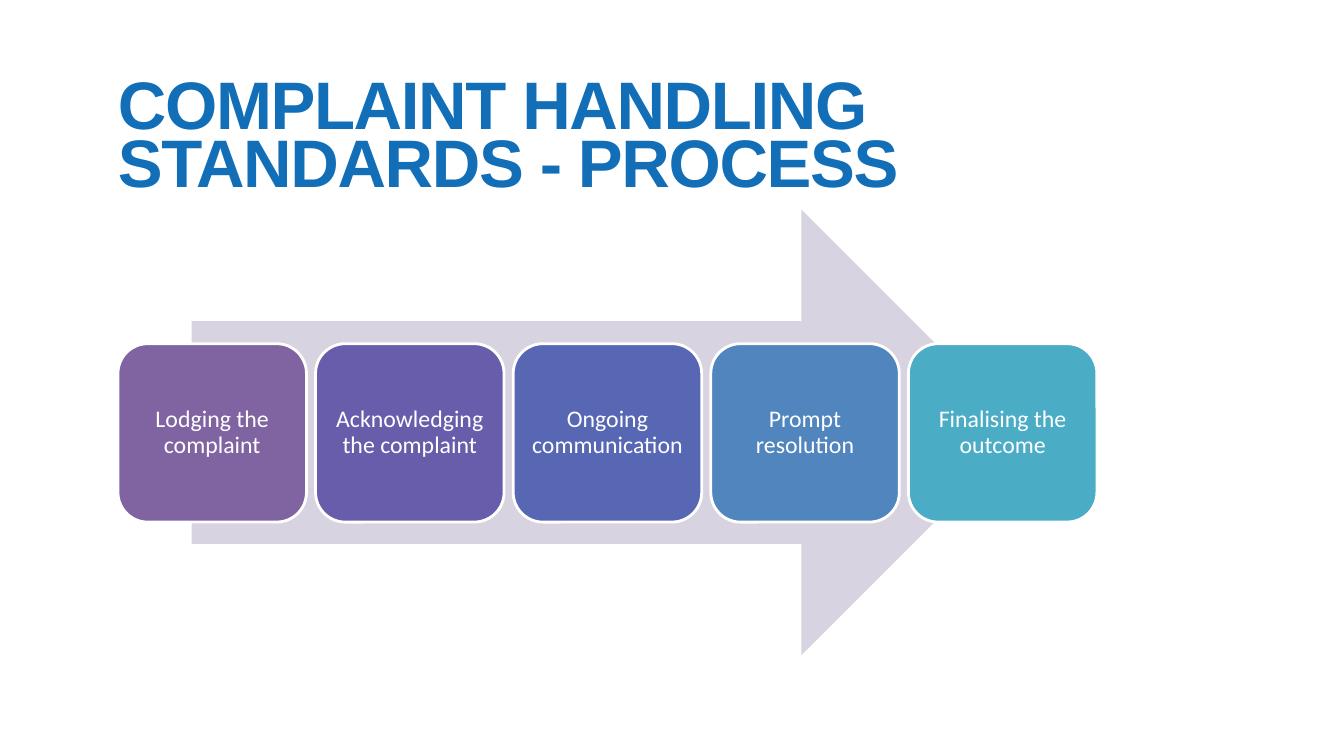
from pptx import Presentation
from pptx import util as u
from pptx.dml.color import RGBColor
from pptx.enum import shapes, text

COLOURS = {
    "title": "116EB7",
    "arrow": "D8D3E0",
    "white": "FFFFFF",
    "lodging": "8064A2",
    "acknowledging": "685DAB",
    "ongoing": "5767B4",
    "prompt": "5185BD",
    "finalising": "4BACC6",
}

STEPS = [
    ("Lodging the complaint", "lodging"),
    ("Acknowledging the complaint", "acknowledging"),
    ("Ongoing communication", "ongoing"),
    ("Prompt resolution", "prompt"),
    ("Finalising the outcome", "finalising"),
]
STEP_LEFT, STEP_TOP, STEP_PITCH = 1.17, 3.41, 1.96
STEP_WIDTH, STEP_HEIGHT = 1.87, 1.77


class ProcessSlide:
    """Holds the slide and its style, and draws each kind of element."""

    def __init__(self, prs):
        self.slide = prs.slides.add_slide(prs.slide_layouts[6])

    def colour(self, name):
        return RGBColor.from_string(COLOURS[name])

    def set_text(self, sp, content, font, size, colour, inset, bold=False):
        """Put one paragraph into a shape and return the paragraph and its run."""
        tf = sp.text_frame
        tf.word_wrap = True
        tf.margin_left = tf.margin_right = u.Inches(inset)
        tf.margin_top = tf.margin_bottom = u.Inches(inset)
        tf.text = content
        p = tf.paragraphs[0]
        r = p.runs[0]
        r.font.name = font
        r.font.size = u.Pt(size)
        r.font.bold = bold
        r.font.color.rgb = self.colour(colour)
        return p, r

    def title(self, content, *box):
        sp = self.slide.shapes.add_textbox(*map(u.Inches, box))
        p, r = self.set_text(sp, content, "Arial", 48, "title", 0, bold=True)
        p.line_spacing = u.Pt(42)
        r._r.get_or_add_rPr().set("spc", "-100")

    def shape(self, kind, fill, *box):
        sp = self.slide.shapes.add_shape(kind, *map(u.Inches, box))
        sp.shadow.inherit = False
        sp.fill.solid()
        sp.fill.fore_color.rgb = self.colour(fill)
        sp.line.fill.background()
        return sp

    def arrow(self, *box):
        self.shape(shapes.MSO_SHAPE.RIGHT_ARROW, "arrow", *box)

    def step(self, content, fill, *box):
        sp = self.shape(shapes.MSO_SHAPE.ROUNDED_RECTANGLE, fill, *box)
        sp.line.color.rgb = self.colour("white")
        sp.line.width = u.Pt(2)
        p, _ = self.set_text(sp, content, "Calibri", 17, "white", 0.07)
        p.alignment = text.PP_ALIGN.CENTER
        p.line_spacing = 0.9
        sp.text_frame.vertical_anchor = text.MSO_ANCHOR.MIDDLE


def main():
    prs = Presentation()
    prs.slide_width, prs.slide_height = u.Inches(13.33), u.Inches(7.5)
    page = ProcessSlide(prs)
    page.title("COMPLAINT HANDLING STANDARDS - PROCESS", 1.17, 0.83, 9.71, 1.18)
    page.arrow(1.9, 2.08, 8.26, 4.42)
    for i, (label, fill) in enumerate(STEPS):
        page.step(label, fill, STEP_LEFT + i * STEP_PITCH, STEP_TOP,
                  STEP_WIDTH, STEP_HEIGHT)
    prs.save("out.pptx")


if __name__ == "__main__":
    main()
